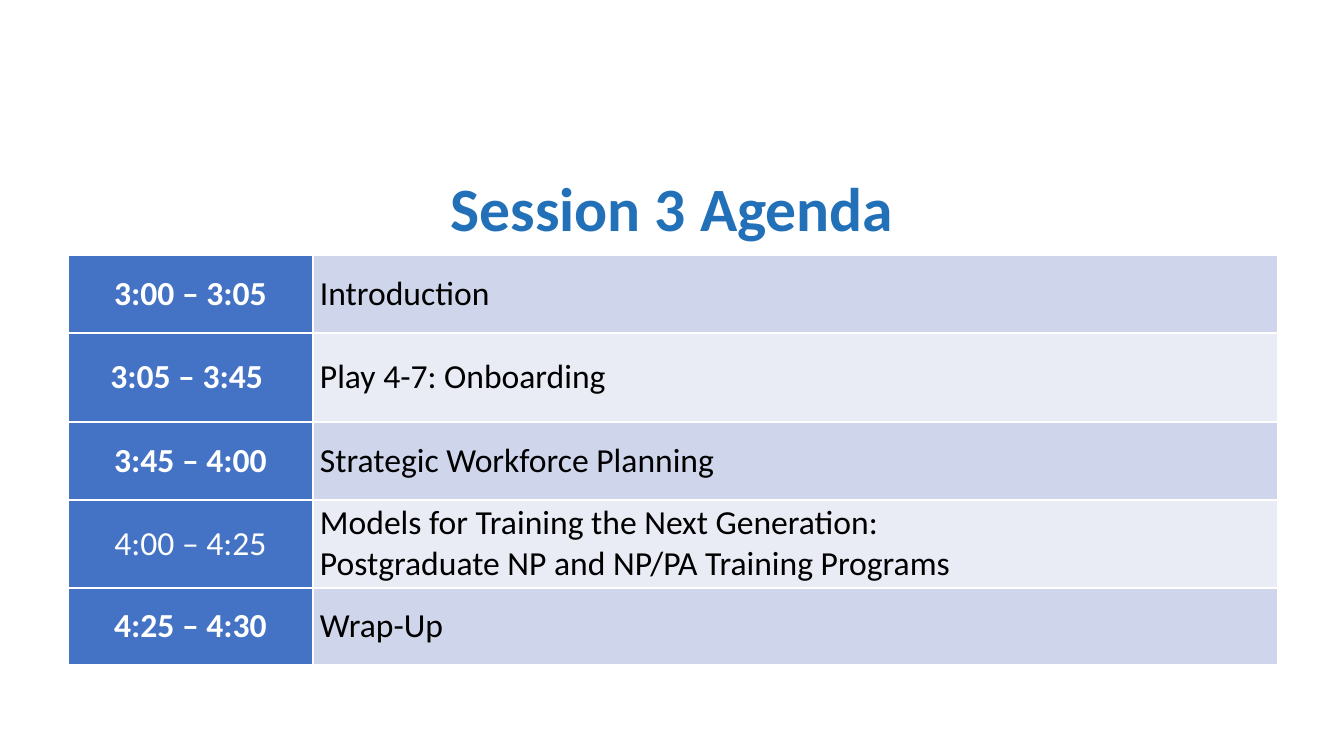
from pptx import Presentation
from pptx.dml.color import RGBColor
from pptx.enum.text import MSO_ANCHOR, PP_ALIGN
from pptx.oxml import parse_xml
from pptx.oxml.ns import nsdecls
from pptx.util import Pt

TITLE = "Session 3 Agenda"
AGENDA = [
    ("3:00 – 3:05", "Introduction", 78, True),
    ("3:05 – 3:45 ", "Play 4-7: Onboarding", 89, True),
    ("3:45 – 4:00", "Strategic Workforce Planning", 78, True),
    ("4:00 – 4:25", "Models for Training the Next Generation:\vPostgraduate NP and NP/PA Training Programs", 88, False),
    ("4:25 – 4:30", "Wrap-Up", 77, True),
]
COLS = (245, 965)
COLORS = {"title": "2270B7", "time": "4472C4", "odd": "CFD5EA",
          "even": "E9EBF5", "white": "FFFFFF", "black": "000000"}
FONT = "Calibri"


def px(count):
    return round(count * 914400 / 100.8)


def rgb(name):
    return RGBColor.from_string(COLORS[name])


def write(frame, text, size=24, color="black", bold=False, align=PP_ALIGN.LEFT, space=1.0):
    frame.word_wrap = True
    para = frame.paragraphs[0]
    para.text = text
    para.alignment = align
    para.line_spacing = space
    for run in para.runs:
        run.font.name = FONT
        run.font.size = Pt(size)
        run.font.bold = bold
        run.font.color.rgb = rgb(color)


def paint(cell, fill):
    cell.fill.solid()
    cell.fill.fore_color.rgb = rgb(fill)
    cell.vertical_anchor = MSO_ANCHOR.MIDDLE
    cell.margin_left = cell.margin_right = px(7)
    cell.margin_top = cell.margin_bottom = 0
    props = cell._tc.get_or_add_tcPr()
    for spot, side in enumerate(("lnL", "lnR", "lnT", "lnB")):
        props.insert(spot, parse_xml(
            f'<a:{side} {nsdecls("a")} w="{Pt(1)}"><a:solidFill>'
            f'<a:srgbClr val="{COLORS["white"]}"/></a:solidFill></a:{side}>'))


def main():
    deck = Presentation()
    deck.slide_width, deck.slide_height = px(1344), px(756)
    slide = deck.slides.add_slide(deck.slide_layouts[5])

    title = slide.shapes.title
    title.left, title.top, title.width, title.height = map(px, (93, 170, 1159, 84))
    title.text_frame.vertical_anchor = MSO_ANCHOR.MIDDLE
    write(title.text_frame, TITLE, size=44, color="title", bold=True,
          align=PP_ALIGN.CENTER, space=0.9)

    high = sum(row[2] for row in AGENDA)
    table = slide.shapes.add_table(len(AGENDA), len(COLS), px(68), px(255),
                                   px(sum(COLS)), px(high)).table
    for col, wide in zip(table.columns, COLS):
        col.width = px(wide)
    for index, (time, topic, tall, bold) in enumerate(AGENDA):
        table.rows[index].height = px(tall)
        left, right = table.rows[index].cells
        paint(left, "time")
        write(left.text_frame, time, color="white", bold=bold, align=PP_ALIGN.CENTER)
        paint(right, "even" if index % 2 else "odd")
        write(right.text_frame, topic)

    deck.save("out.pptx")


if __name__ == "__main__":
    main()
